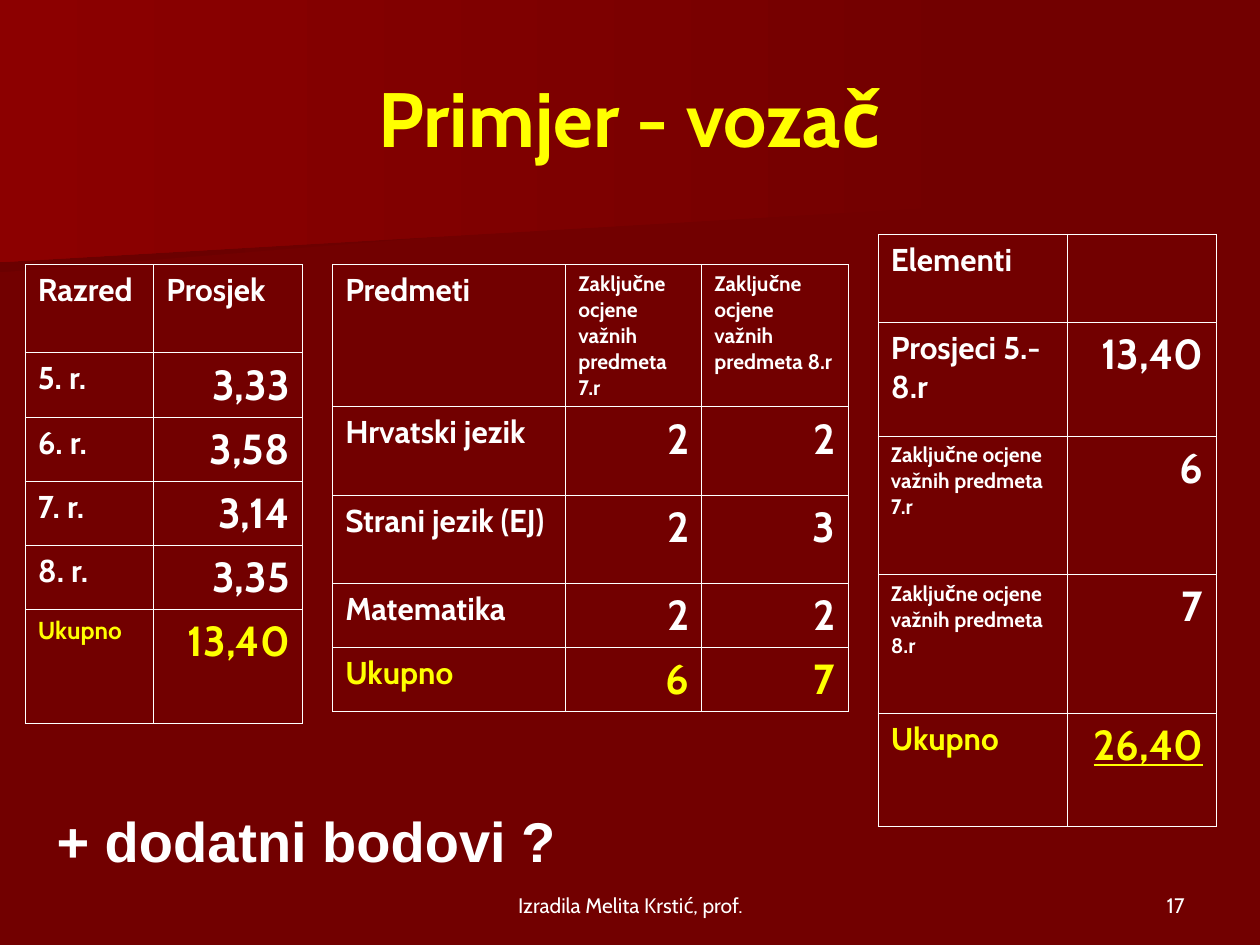
from lxml import etree
from pptx import Presentation
from pptx import util as u
from pptx.dml.color import RGBColor
from pptx.enum import text
from pptx.oxml import ns

WHITE = RGBColor(0xFF, 0xFF, 0xFF)
YELLOW = RGBColor(0xFF, 0xFF, 0x00)
MAROON = RGBColor(0x72, 0x00, 0x00)
DARK = RGBColor(0x6B, 0x00, 0x00)
RED = RGBColor(0x8C, 0x00, 0x00)
LEFT, CENTER, RIGHT = text.PP_ALIGN.LEFT, text.PP_ALIGN.CENTER, text.PP_ALIGN.RIGHT
MIDDLE, BOTTOM, TOP = text.MSO_ANCHOR.MIDDLE, text.MSO_ANCHOR.BOTTOM, text.MSO_ANCHOR.TOP

GRADE_7 = "Zaključne ocjene važnih predmeta 7.r"
GRADE_8 = "Zaključne ocjene važnih predmeta 8.r"

BANDS = [
    (DARK, [(7.78, 1.53), (0, 2.16), (0, 1.01), (7.79, 1.01), (7.78, 1.28)]),
    (RED, [(7.91, 1.62), (0, 2.08), (0, 0), (7.92, 0)]),
]

TABLES = [
    {"at": (0.2, 2.1), "cols": [1.02, 1.18], "rows": [0.7, 0.5, 0.5, 0.5, 0.5, 0.9],
     "total_size": 14, "total_underline": None,
     "cells": [["Razred", "Prosjek"], ["5. r.", "3,33"], ["6. r.", "3,58"],
               ["7. r.", "3,14"], ["8. r.", "3,35"], ["Ukupno", "13,40"]]},
    {"at": (2.64, 2.1), "cols": [1.85, 1.08, 1.16], "rows": [1.1, 0.7, 0.7, 0.5, 0.5],
     "total_size": 18, "total_underline": None,
     "cells": [["Predmeti", GRADE_7, GRADE_8], ["Hrvatski jezik", "2", "2"],
               ["Strani jezik (EJ)", "2", "3"], ["Matematika", "2", "2"],
               ["Ukupno", "6", "7"]]},
    {"at": (6.97, 1.86), "cols": [1.5, 1.18], "rows": [0.7, 0.9, 1.1, 1.1, 0.9],
     "total_size": 18, "total_underline": True,
     "cells": [["Elementi", ""], ["Prosjeci 5.-8.r", "13,40"], [GRADE_7, "6"],
               [GRADE_8, "7"], ["Ukupno", "26,40"]]},
]

TEXTS = [
    ("Primjer - vozač", (0.5, 0.3, 9, 1.25), MIDDLE, CENTER,
     {"size": u.Pt(44), "name": "Cabin", "bold": True}, YELLOW),
    ("17", (7.17, 6.83, 2.33, 0.5), BOTTOM, RIGHT,
     {"size": u.Pt(12), "name": "Cabin"}, WHITE),
    ("Izradila Melita Krstić, prof.", (3.42, 6.83, 3.17, 0.5), BOTTOM, CENTER,
     {"size": u.Pt(12), "name": "Cabin"}, WHITE),
    ("+ dodatni bodovi ?", (0.35, 6.35, 5.35, 0.64), TOP, LEFT,
     {"size": u.Pt(32), "name": "Arial", "bold": True}, WHITE),
]


def write(p, content, align, font, color):
    p.alignment = align
    r = p.add_run()
    r.text = content
    for key, value in font.items():
        setattr(r.font, key, value)
    r.font.color.rgb = color


def add_band(s, color, points):
    scaled = [(u.Inches(x), u.Inches(y)) for x, y in points]
    builder = s.shapes.build_freeform(*scaled[0])
    builder.add_line_segments(scaled[1:], close=True)
    sp = builder.convert_to_shape()
    sp.shadow.inherit = False
    sp.line.fill.background()
    sp.fill.gradient()
    sp.fill.gradient_angle = 180
    for stop, rgb in zip(sp.fill.gradient_stops, (MAROON, color)):
        stop.color.rgb = rgb
    for stop, position in zip(sp.fill.gradient_stops, (0, 1)):
        stop.position = position


def add_borders(cell):
    tc_pr = cell._tc.get_or_add_tcPr()
    for side in ("a:lnL", "a:lnR", "a:lnT", "a:lnB"):
        ln = etree.SubElement(tc_pr, ns.qn(side), w=str(u.Pt(0.45)))
        fill = etree.SubElement(ln, ns.qn("a:solidFill"))
        etree.SubElement(fill, ns.qn("a:srgbClr"), val=str(WHITE))


def add_table(s, spec_table):
    cols, rows = spec_table["cols"], spec_table["rows"]
    box = (*spec_table["at"], sum(cols), sum(rows))
    table = s.shapes.add_table(len(rows), len(cols), *map(u.Inches, box)).table
    table.first_row = table.horz_banding = False
    for column, width in zip(table.columns, cols):
        column.width = u.Inches(width)
    for row, height in zip(table.rows, rows):
        row.height = u.Inches(height)
    for i, values in enumerate(spec_table["cells"]):
        total = i == len(rows) - 1
        for j, value in enumerate(values):
            cell = table.cell(i, j)
            add_borders(cell)
            cell.fill.background()
            if not value:
                continue
            number = i > 0 and j > 0
            size = 24 if number else 12 if value in (GRADE_7, GRADE_8) else 18
            if total and not number:
                size = spec_table["total_size"]
            font = {"size": u.Pt(size), "name": "Cabin", "bold": True}
            if total and number:
                font["underline"] = spec_table["total_underline"]
            p = cell.text_frame.paragraphs[0]
            p.line_spacing = 1.01
            write(p, value, RIGHT if number else LEFT, font, YELLOW if total else WHITE)


def add_text(s, content, box, anchor, align, font, color):
    tf = s.shapes.add_textbox(*map(u.Inches, box)).text_frame
    tf.word_wrap = True
    tf.vertical_anchor = anchor
    write(tf.paragraphs[0], content, align, font, color)


def main():
    prs = Presentation()
    prs.slide_width, prs.slide_height = u.Inches(10), u.Inches(7.5)
    s = prs.slides.add_slide(prs.slide_layouts[6])
    s.background.fill.solid()
    s.background.fill.fore_color.rgb = MAROON
    for band in BANDS:
        add_band(s, *band)
    for table in TABLES:
        add_table(s, table)
    for item in TEXTS:
        add_text(s, *item)
    prs.save("out.pptx")


if __name__ == "__main__":
    main()
